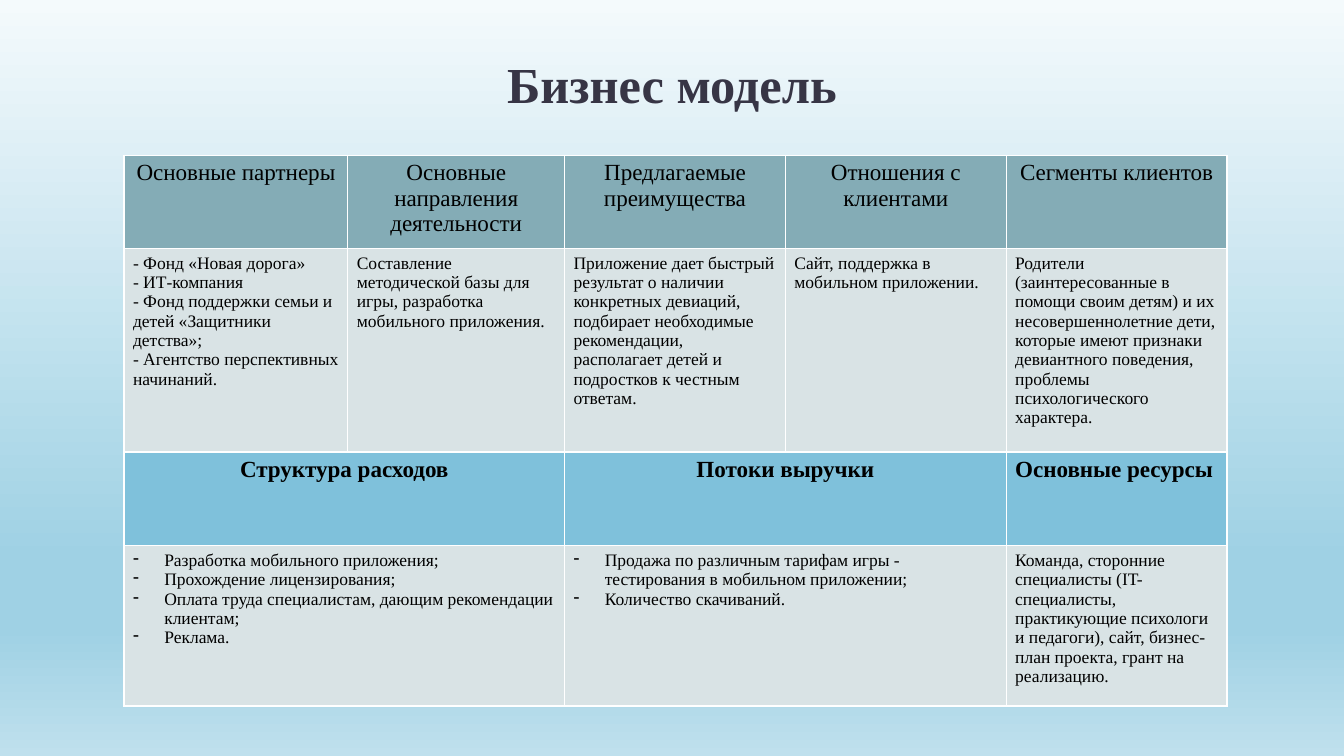
from lxml import etree
from pptx import Presentation
from pptx.dml.color import RGBColor
from pptx.enum.text import MSO_ANCHOR, PP_ALIGN
from pptx.oxml.ns import qn
from pptx.util import Inches, Pt

CENTER, LEFT = PP_ALIGN.CENTER, PP_ALIGN.LEFT
BOTTOM = MSO_ANCHOR.BOTTOM

FONT = "Times New Roman"
HEADING_SIZE, BODY_SIZE = 16.5, 12.5
INDENT = Inches(0.31)
BORDER_WIDTH = Pt(1)

BLACK = RGBColor(0x00, 0x00, 0x00)
WHITE = RGBColor(0xFF, 0xFF, 0xFF)
TITLE_COLOR = RGBColor(0x37, 0x35, 0x45)
TEAL = RGBColor(0x84, 0xAC, 0xB6)
SKY = RGBColor(0x7F, 0xC1, 0xDB)
PALE = RGBColor(0xD9, 0xE3, 0xE5)
BACKGROUND_STOPS = [
    (0, RGBColor(0xF4, 0xFA, 0xFC)),
    (74, RGBColor(0x9F, 0xD1, 0xE4)),
    (83, RGBColor(0x9F, 0xD1, 0xE4)),
    (100, RGBColor(0xBF, 0xE0, 0xED)),
]

COLUMN_WIDTHS = [2.22, 2.15, 2.19, 2.19, 2.19]
ROW_HEIGHTS = [0.92, 2.02, 0.93, 1.59]


def write_text(frame, lines, size=BODY_SIZE, bold=False, color=BLACK,
               align=LEFT, spacing=None, dashes=False):
    for index, line in enumerate(lines):
        paragraph = frame.paragraphs[0] if index == 0 else frame.add_paragraph()
        paragraph.alignment = align
        if spacing:
            paragraph.line_spacing = spacing
        run = paragraph.add_run()
        run.text = line
        run.font.name = FONT
        run.font.size = Pt(size)
        run.font.bold = bold
        run.font.color.rgb = color
        if dashes:
            properties = paragraph._p.get_or_add_pPr()
            properties.set("marL", str(INDENT))
            properties.set("indent", str(-INDENT))
            etree.SubElement(properties, qn("a:buChar"), char="-")


def format_cell(cell, color):
    cell.margin_left = cell.margin_right = Inches(0.09)
    cell.margin_top = cell.margin_bottom = Inches(0.05)
    properties = cell._tc.get_or_add_tcPr()
    for side in ("lnL", "lnR", "lnT", "lnB"):
        line = etree.SubElement(properties, qn(f"a:{side}"), w=str(BORDER_WIDTH))
        solid = etree.SubElement(line, qn("a:solidFill"))
        etree.SubElement(solid, qn("a:srgbClr"), val=str(WHITE))
    cell.fill.solid()
    cell.fill.fore_color.rgb = color


presentation = Presentation()
presentation.slide_width = Inches(13.33)
presentation.slide_height = Inches(7.5)
slide = presentation.slides.add_slide(presentation.slide_layouts[6])

# Background gradient, from top to bottom
background = slide.background.fill
background.gradient()
background.gradient_angle = 270
stop_list = next(slide.element.iter(qn("a:gsLst")))
for stop in list(stop_list):
    stop_list.remove(stop)
for position, color in BACKGROUND_STOPS:
    stop = etree.SubElement(stop_list, qn("a:gs"), pos=str(position * 1000))
    etree.SubElement(stop, qn("a:srgbClr"), val=str(color))

# Title
title = slide.shapes.add_textbox(0, 0, presentation.slide_width, Inches(1.17))
title.text_frame.word_wrap = True
title.text_frame.vertical_anchor = BOTTOM
write_text(title.text_frame, ["Бизнес модель"], size=36, bold=True,
           color=TITLE_COLOR, align=CENTER, spacing=0.8)

# Table grid
table = slide.shapes.add_table(
    len(ROW_HEIGHTS), len(COLUMN_WIDTHS), Inches(1.23), Inches(1.54),
    Inches(sum(COLUMN_WIDTHS)), Inches(sum(ROW_HEIGHTS))).table
table.first_row = table.horz_banding = False
for column, width in zip(table.columns, COLUMN_WIDTHS):
    column.width = Inches(width)
for row, height in zip(table.rows, ROW_HEIGHTS):
    row.height = Inches(height)
for row, color in zip(table.rows, [TEAL, PALE, SKY, PALE]):
    for cell in row.cells:
        format_cell(cell, color)

# Upper half: five columns
upper_blocks = [
    ("Основные партнеры",
     ["- Фонд «Новая дорога»", "- ИТ-компания",
      "- Фонд поддержки семьи и детей «Защитники детства»;",
      "- Агентство перспективных начинаний."]),
    ("Основные направления деятельности",
     ["Составление методической базы для игры, разработка мобильного "
      "приложения."]),
    ("Предлагаемые преимущества",
     ["Приложение дает быстрый результат о наличии конкретных девиаций, "
      "подбирает необходимые рекомендации,",
      "располагает детей и подростков к честным ответам."]),
    ("Отношения с клиентами",
     ["Сайт, поддержка в мобильном приложении."]),
    ("Сегменты клиентов",
     ["Родители (заинтересованные в помощи своим детям) и их "
      "несовершеннолетние дети, которые имеют признаки девиантного "
      "поведения, проблемы психологического характера."]),
]
for column, (heading, lines) in enumerate(upper_blocks):
    write_text(table.cell(0, column).text_frame, [heading],
               size=HEADING_SIZE, align=CENTER)
    write_text(table.cell(1, column).text_frame, lines)

# Lower half: two double columns and a single one
lower_blocks = [
    (0, 2, "Структура расходов",
     ["Разработка мобильного приложения;", "Прохождение лицензирования;",
      "Оплата труда специалистам, дающим рекомендации клиентам;",
      "Реклама."]),
    (2, 2, "Потоки выручки",
     ["Продажа по различным тарифам игры - тестирования в мобильном "
      "приложении;", "Количество скачиваний."]),
    (4, 1, "Основные ресурсы",
     ["Команда, сторонние специалисты (IT-специалисты, практикующие "
      "психологи и педагоги), сайт, бизнес-план проекта, грант на "
      "реализацию."]),
]
for column, span, heading, lines in lower_blocks:
    double = span == 2
    if double:
        for row in (2, 3):
            table.cell(row, column).merge(table.cell(row, column + 1))
    write_text(table.cell(2, column).text_frame, [heading], size=HEADING_SIZE,
               bold=True, align=CENTER if double else LEFT)
    write_text(table.cell(3, column).text_frame, lines, dashes=double)

presentation.save("out.pptx")
